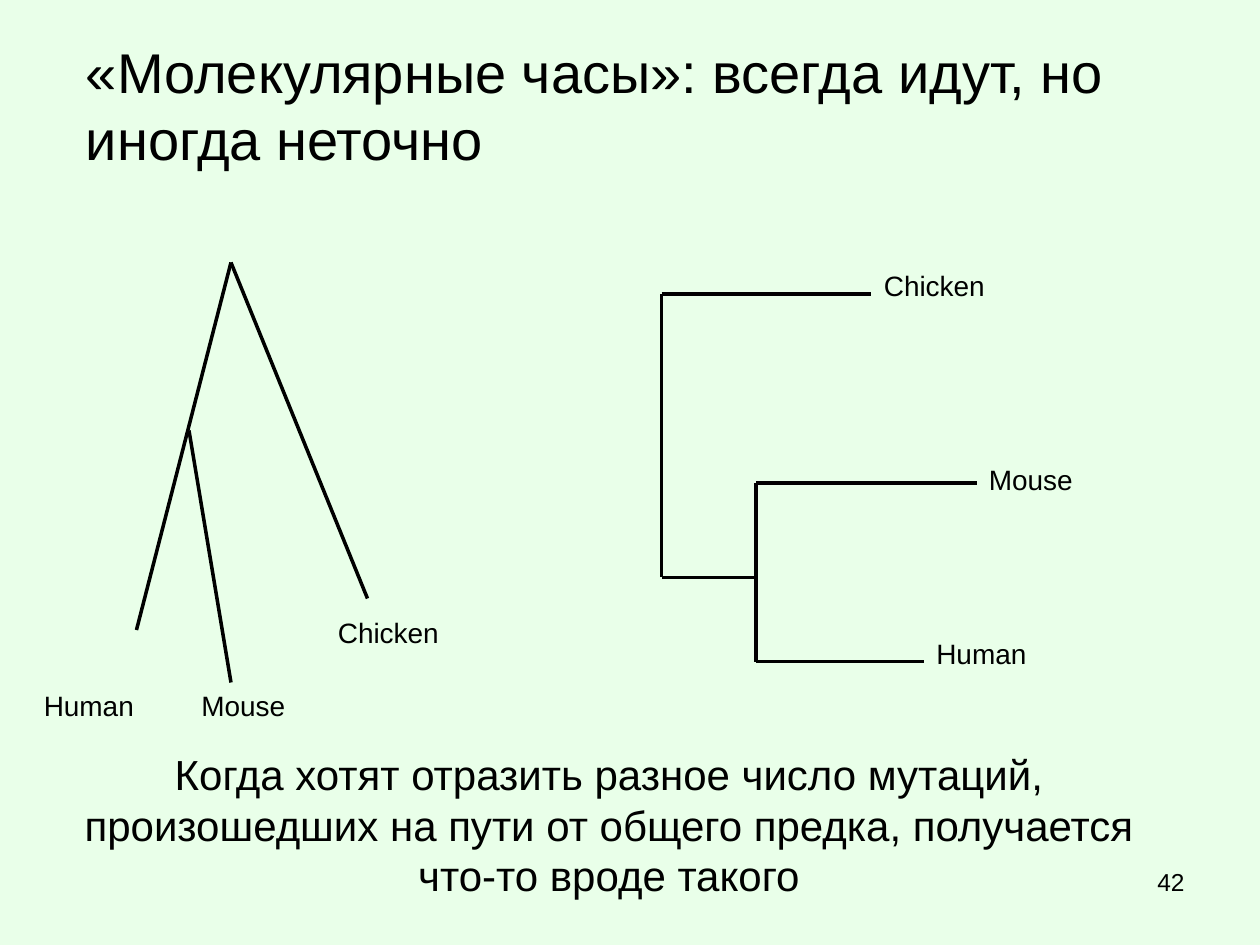
from lxml import etree
from pptx import Presentation
from pptx.dml.color import RGBColor
from pptx.enum.shapes import MSO_CONNECTOR
from pptx.enum.text import MSO_ANCHOR, MSO_AUTO_SIZE, PP_ALIGN
from pptx.oxml.ns import qn
from pptx.util import Pt

STRAIGHT = MSO_CONNECTOR.STRAIGHT
TOP, MIDDLE = MSO_ANCHOR.TOP, MSO_ANCHOR.MIDDLE
LEFT, CENTER, RIGHT = PP_ALIGN.LEFT, PP_ALIGN.CENTER, PP_ALIGN.RIGHT
NO_AUTOFIT = MSO_AUTO_SIZE.NONE

MINT = RGBColor(0xE9, 0xFF, 0xE9)
BLACK = RGBColor(0x00, 0x00, 0x00)

TITLE_ONLY = 5
LABEL_HEIGHT = 27
LABEL_WIDTHS = {"Human": 66, "Mouse": 90, "Chicken": 120}


class SlideBuilder:
    """Holds the slide and its style; all lengths are in points."""

    font_name = "Arial"
    line_width = 2

    def __init__(self, slide):
        self.slide = slide
        background = slide.background.fill
        background.solid()
        background.fore_color.rgb = MINT

    def set_text(self, shape, text, size, align=LEFT, anchor=TOP):
        frame = shape.text_frame
        frame_format = {"word_wrap": True, "auto_size": NO_AUTOFIT,
                        "vertical_anchor": anchor}
        for name, value in frame_format.items():
            setattr(frame, name, value)
        paragraph = frame.paragraphs[0]
        paragraph.alignment = align
        run = paragraph.add_run()
        run.text = text
        font_format = {"name": self.font_name, "size": Pt(size), "bold": False}
        for name, value in font_format.items():
            setattr(run.font, name, value)
        run.font.color.rgb = BLACK

    def title(self, text, left, top, width, height, size):
        shape = self.slide.shapes.title
        box = {"left": left, "top": top, "width": width, "height": height}
        for name, value in box.items():
            setattr(shape, name, Pt(value))
        self.set_text(shape, text, size, CENTER, MIDDLE)

    def text(self, text, left, top, width, height, size, align=LEFT):
        box = self.slide.shapes.add_textbox(
            Pt(left), Pt(top), Pt(width), Pt(height))
        self.set_text(box, text, size, align)

    def species(self, name, left, top):
        self.text(name, left, top, LABEL_WIDTHS[name], LABEL_HEIGHT, 16)

    def branch(self, start, end):
        line = self.slide.shapes.add_connector(
            STRAIGHT, *(Pt(value) for value in (*start, *end)))
        line.line.width = Pt(self.line_width)
        line.line.color.rgb = BLACK
        etree.SubElement(line._element.spPr, qn("a:effectLst"))

    def fork(self, x, branches):
        """Vertical stem at x with a horizontal branch at each (y, tip x)."""
        heights = [y for y, _ in branches]
        self.branch((x, min(heights)), (x, max(heights)))
        for y, tip in branches:
            self.branch((x, y), (tip, y))


def main():
    presentation = Presentation()
    presentation.slide_width, presentation.slide_height = Pt(720), Pt(540)
    layout = presentation.slide_layouts[TITLE_ONLY]
    page = SlideBuilder(presentation.slides.add_slide(layout))

    # Conclusion in the title placeholder, heading above the trees
    page.title("Когда хотят отразить разное число мутаций, произошедших на "
               "пути от общего предка, получается что-то вроде такого",
               24, 426, 648, 90, 24)
    page.text("«Молекулярные часы»: всегда идут, но иногда неточно",
              42, 18, 648, 85, 32)

    # Slanted tree
    root, mammal_ancestor = (132, 150), (108, 246)
    page.branch(root, (78, 360))
    page.branch(root, (210, 342))
    page.branch(mammal_ancestor, (132, 390))

    # Rectangular tree
    root_x, mammal_x = 378, 432
    page.fork(root_x, [(168, 498), (330, mammal_x)])
    page.fork(mammal_x, [(276, 558), (378, 528)])

    # Species names at the branch tips
    for name, left, top in [
        ("Human", 18, 390), ("Mouse", 108, 390), ("Chicken", 186, 348),
        ("Human", 528, 360), ("Mouse", 558, 261), ("Chicken", 498, 150),
    ]:
        page.species(name, left, top)

    # Slide number
    page.text("42", 516, 492, 168, 37, 14, RIGHT)

    presentation.save("out.pptx")


if __name__ == "__main__":
    main()
